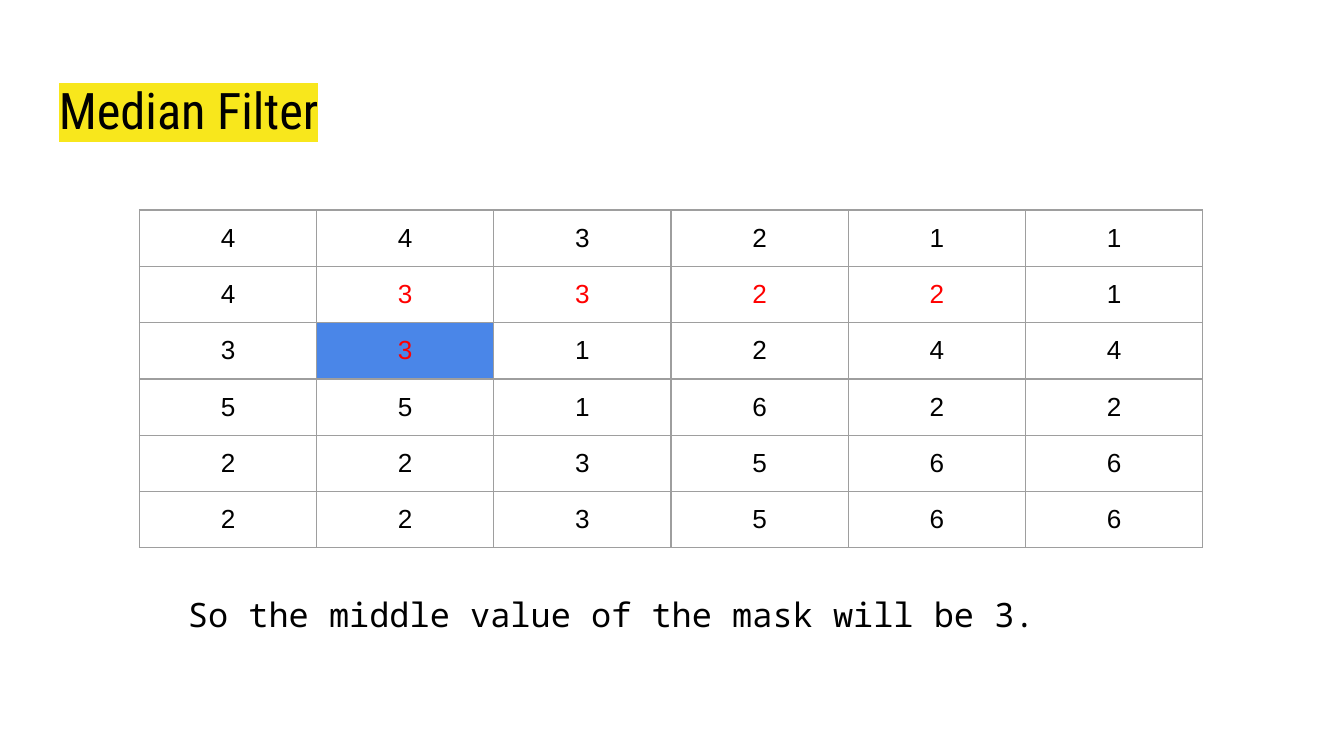
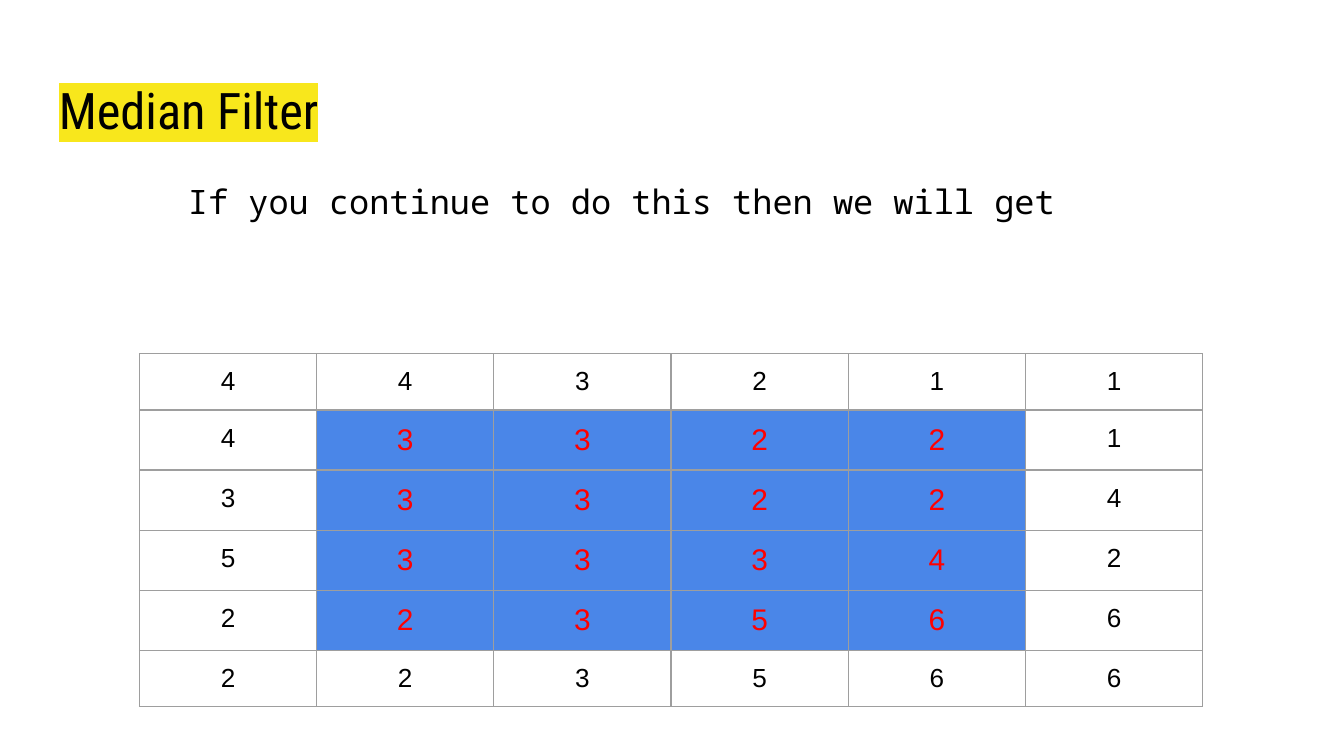
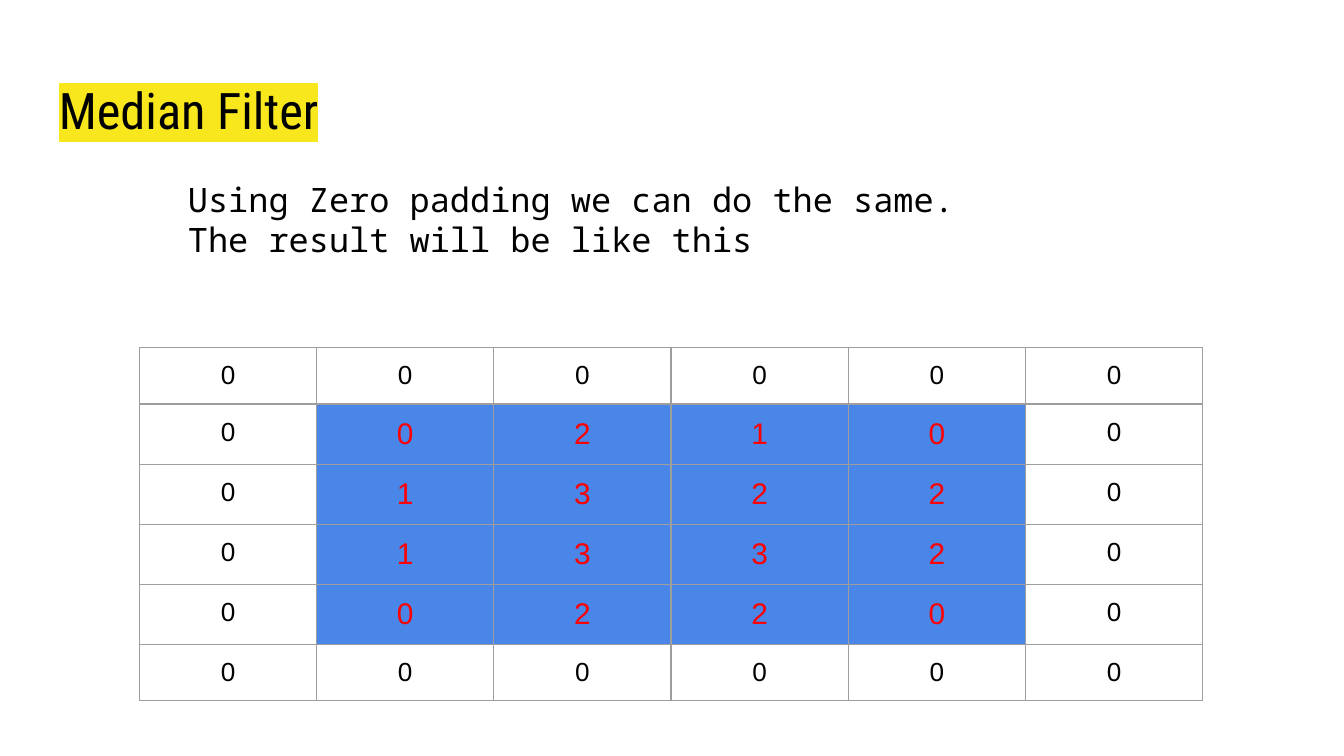
from dataclasses import dataclass
from itertools import product

from lxml.etree import SubElement
from pptx import Presentation
from pptx.dml.color import RGBColor
from pptx.enum.text import MSO_ANCHOR, MSO_AUTO_SIZE, PP_ALIGN
from pptx.oxml import parse_xml
from pptx.oxml.ns import nsdecls, qn
from pptx.slide import Slide
from pptx.table import _Cell
from pptx.text.text import TextFrame, _Paragraph
from pptx.util import Emu, Pt

EMU_PER_PX = 5715
SLIDE_W, SLIDE_H = 1600, 900
INSET = 16
TITLE_BOX = (54, 78, 1491, 101)
TABLE_LEFT, COL_W, ROW_H = 166, 211, 67
CAPTION_LEFT, CAPTION_W = 208, 1184
COLORS = {
    "text": "000000",
    "highlight": "F8E71C",
    "border": "9E9E9E",
    "result": "FF0000",
    "mask": "4A86E8",
}
FONTS = {"title": "Roboto Condensed", "cell": "Arial", "caption": "Noto Sans Mono"}
INNER = frozenset(product(range(1, 5), repeat=2))


@dataclass(frozen=True)
class Grid:
    top: int
    rows: tuple[str, ...]
    results: frozenset[tuple[int, int]] = INNER
    masked: frozenset[tuple[int, int]] = INNER
    result_size: int = 16


@dataclass(frozen=True)
class Caption:
    text: str
    top: int
    height: int = 80


@dataclass(frozen=True)
class FilterStep:
    grid: Grid
    caption: Caption


STEPS = (
    FilterStep(
        Grid(
            250,
            ("443211", "433221", "331244", "551622", "223566", "223566"),
            results=frozenset({(1, 1), (1, 2), (1, 3), (1, 4), (2, 1)}),
            masked=frozenset({(2, 1)}),
            result_size=14,
        ),
        Caption("So the middle value of the mask will be 3.", 691),
    ),
    FilterStep(
        Grid(421, ("443211", "433221", "333224", "533342", "223566", "223566")),
        Caption("If you continue to do this then we will get", 200),
    ),
    FilterStep(
        Grid(414, ("000000", "002100", "013220", "013320", "002200", "000000")),
        Caption("Using Zero padding we can do the same.\vThe result will be like this", 197, 130),
    ),
)


def px(n: int) -> Emu:
    return Emu(n * EMU_PER_PX)


def set_insets(target: TextFrame | _Cell) -> None:
    target.margin_left = target.margin_right = px(INSET)
    target.margin_top = target.margin_bottom = px(INSET)


def format_runs(p: _Paragraph, font: str, size: int, color: str = "text", highlight: str = "") -> None:
    for r in p.runs:
        r.font.size = Pt(size)
        r.font.color.rgb = RGBColor.from_string(COLORS[color])
        if highlight:
            mark = SubElement(r.font._element, qn("a:highlight"))
            SubElement(mark, qn("a:srgbClr"), val=COLORS[highlight])
        r.font.name = FONTS[font]


def add_title(s: Slide) -> None:
    sp = s.shapes.title
    sp.left, sp.top, sp.width, sp.height = map(px, TITLE_BOX)
    tf = sp.text_frame
    set_insets(tf)
    tf.word_wrap = True
    tf.auto_size = MSO_AUTO_SIZE.NONE
    tf.vertical_anchor = MSO_ANCHOR.TOP
    tf.text = "Median Filter"
    p = tf.paragraphs[0]
    p.alignment = PP_ALIGN.LEFT
    format_runs(p, "title", 27, highlight="highlight")


def set_borders(cell: _Cell) -> None:
    tc_pr = cell._tc.get_or_add_tcPr()
    for i, side in enumerate("LRTB"):
        line = parse_xml(
            f'<a:ln{side} {nsdecls("a")} w="{Pt(0.75)}"><a:solidFill>'
            f'<a:srgbClr val="{COLORS["border"]}"/></a:solidFill></a:ln{side}>'
        )
        tc_pr.insert(i, line)


def add_grid(s: Slide, grid: Grid) -> None:
    n_rows, n_cols = len(grid.rows), len(grid.rows[0])
    table = s.shapes.add_table(
        n_rows, n_cols, px(TABLE_LEFT), px(grid.top), px(COL_W * n_cols), px(ROW_H * n_rows)
    ).table
    table.first_row = table.horz_banding = False
    for i, j in product(range(n_rows), range(n_cols)):
        cell = table.cell(i, j)
        set_insets(cell)
        cell.text_frame.text = grid.rows[i][j]
        p = cell.text_frame.paragraphs[0]
        p.alignment = PP_ALIGN.CENTER
        if (i, j) in grid.results:
            format_runs(p, "cell", grid.result_size, "result")
        else:
            format_runs(p, "cell", 14)
        if (i, j) in grid.masked:
            cell.fill.solid()
            cell.fill.fore_color.rgb = RGBColor.from_string(COLORS["mask"])
        else:
            cell.fill.background()
        set_borders(cell)


def add_caption(s: Slide, caption: Caption) -> None:
    sp = s.shapes.add_textbox(px(CAPTION_LEFT), px(caption.top), px(CAPTION_W), px(caption.height))
    tf = sp.text_frame
    set_insets(tf)
    tf.word_wrap = True
    tf.auto_size = MSO_AUTO_SIZE.SHAPE_TO_FIT_TEXT
    tf.text = caption.text
    format_runs(tf.paragraphs[0], "caption", 18)


def main() -> None:
    prs = Presentation()
    prs.slide_width, prs.slide_height = px(SLIDE_W), px(SLIDE_H)
    for step in STEPS:
        s = prs.slides.add_slide(prs.slide_layouts[5])
        add_title(s)
        add_grid(s, step.grid)
        add_caption(s, step.caption)
    prs.save("out.pptx")


if __name__ == "__main__":
    main()
